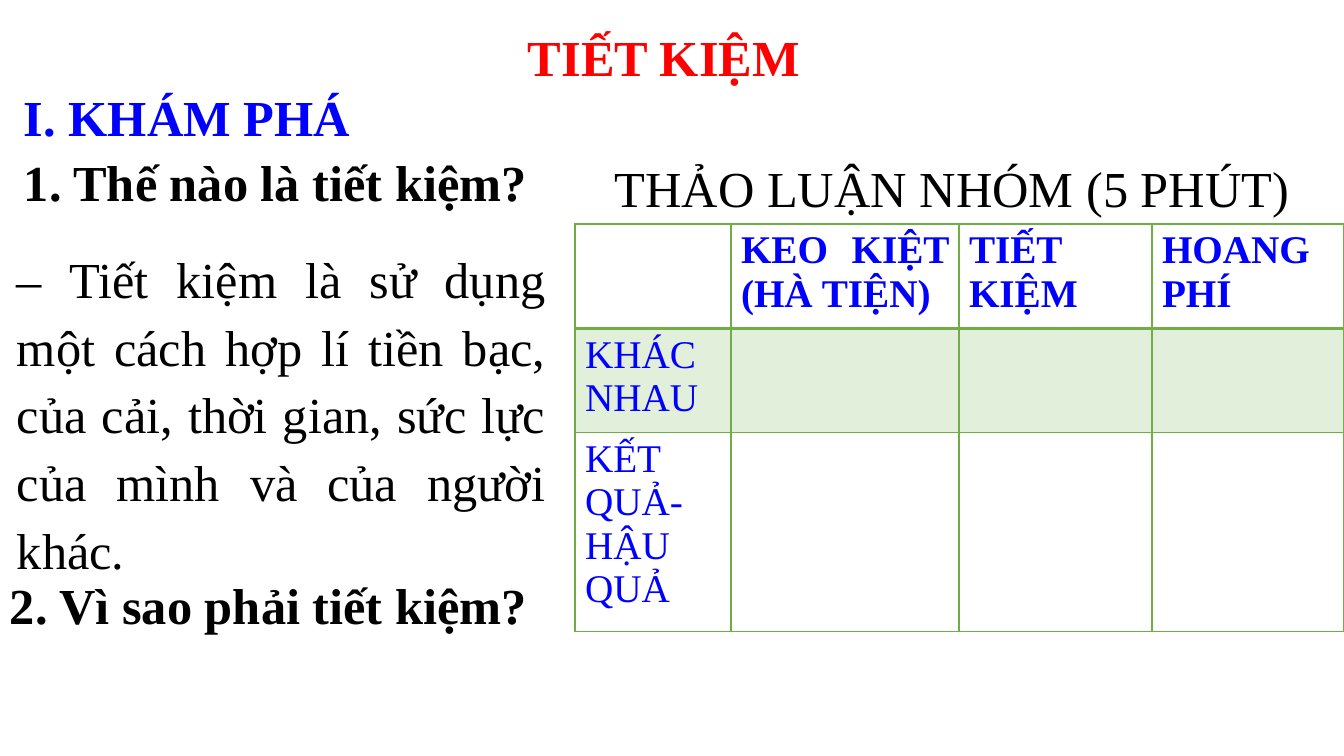
from lxml.etree import SubElement as Sub
from pptx import Presentation
from pptx.dml.color import RGBColor as RGB
from pptx.enum.text import PP_ALIGN as Align
from pptx.oxml.ns import qn
from pptx.util import Pt

RED = RGB(0xFF, 0x00, 0x00)
BLUE = RGB(0x00, 0x00, 0xFF)
BLACK = RGB(0x00, 0x00, 0x00)
WHITE = RGB(0xFF, 0xFF, 0xFF)
GREEN = RGB(0x70, 0xAD, 0x47)
PALE = RGB(0xE2, 0xEF, 0xDB)
PX = 914400 / 100.8


def px(n):
    """Turn pixels into EMU."""
    return round(n * PX)


class Page:
    """Hold the slide and its text style."""

    def __init__(self, deck, font):
        """Add a blank slide to the deck."""
        self.slide = deck.slides.add_slide(deck.slide_layouts[6])
        self.font = font

    def style(self, para, size, color, bold, align, gap):
        """Set the look of a paragraph."""
        font = para.font
        font.name, font.size, font.bold = self.font, Pt(size), bold
        font.color.rgb = color
        para.alignment, para.line_spacing = align, gap

    def text(self, words, box, color=BLACK, bold=False, align=Align.LEFT, gap=1.0):
        """Add a wrapped text box."""
        frame = self.slide.shapes.add_textbox(*map(px, box)).text_frame
        frame.word_wrap = True
        para = frame.paragraphs[0]
        para.text = words
        self.style(para, 36, color, bold, align, gap)

    def edge(self, cell, side, width):
        """Draw one border of a cell."""
        props = cell._tc.get_or_add_tcPr()
        line = Sub(props, qn("a:" + side), w=str(Pt(width)))
        Sub(Sub(line, qn("a:solidFill")), qn("a:srgbClr"), val=str(GREEN))

    def table(self, rows, left, top, wide, high):
        """Add a bordered table with a shaded second row."""
        size = px(left), px(top), px(sum(wide)), px(sum(high))
        grid = self.slide.shapes.add_table(len(high), len(wide), *size).table
        for col, width in zip(grid.columns, wide):
            col.width = px(width)
        for r, (row, height) in enumerate(zip(rows, high)):
            grid.rows[r].height = px(height)
            for c, words in enumerate(row):
                cell = grid.cell(r, c)
                for side in ("lnL", "lnR", "lnT", "lnB"):
                    thick = (r, side) in ((0, "lnB"), (1, "lnT"))
                    self.edge(cell, side, 2.5 if thick else 1)
                cell.fill.solid()
                cell.fill.fore_color.rgb = PALE if r == 1 else WHITE
                para = cell.text_frame.paragraphs[0]
                para.text = words
                self.style(para, 28, BLUE, r == 0, Align.JUSTIFY, 1.0)


def main():
    """Build the lesson slide."""
    deck = Presentation()
    deck.slide_width, deck.slide_height = px(1344), px(756)
    page = Page(deck, "Times New Roman")
    page.text("TIẾT KIỆM", (484, 21, 360, 72), RED, True, Align.CENTER)
    page.text("I. KHÁM PHÁ", (14, 81, 540, 72), BLUE, True)
    page.text("1. Thế nào là tiết kiệm?", (14, 146, 560, 72), bold=True)
    page.text(
        "– Tiết kiệm là sử dụng một cách hợp lí tiền bạc, của cải, "
        "thời gian, sức lực của mình và của người khác.",
        (7, 236, 549, 347), align=Align.JUSTIFY, gap=1.12)
    page.text("2. Vì sao phải tiết kiệm?", (0, 569, 683, 72), bold=True)
    page.text("THẢO LUẬN NHÓM (5 PHÚT)", (582, 145, 740, 74),
              align=Align.CENTER, gap=1.12)
    rows = (
        ("", "KEO KIỆT (HÀ TIỆN)", "TIẾT KIỆM", "HOANG PHÍ"),
        ("KHÁC NHAU", "", "", ""),
        ("KẾT QUẢ- HẬU QUẢ", "", "", ""),
    )
    page.table(rows, 575, 224, (156, 228, 193, 192), (104, 104, 199))
    deck.save("out.pptx")


if __name__ == "__main__":
    main()
